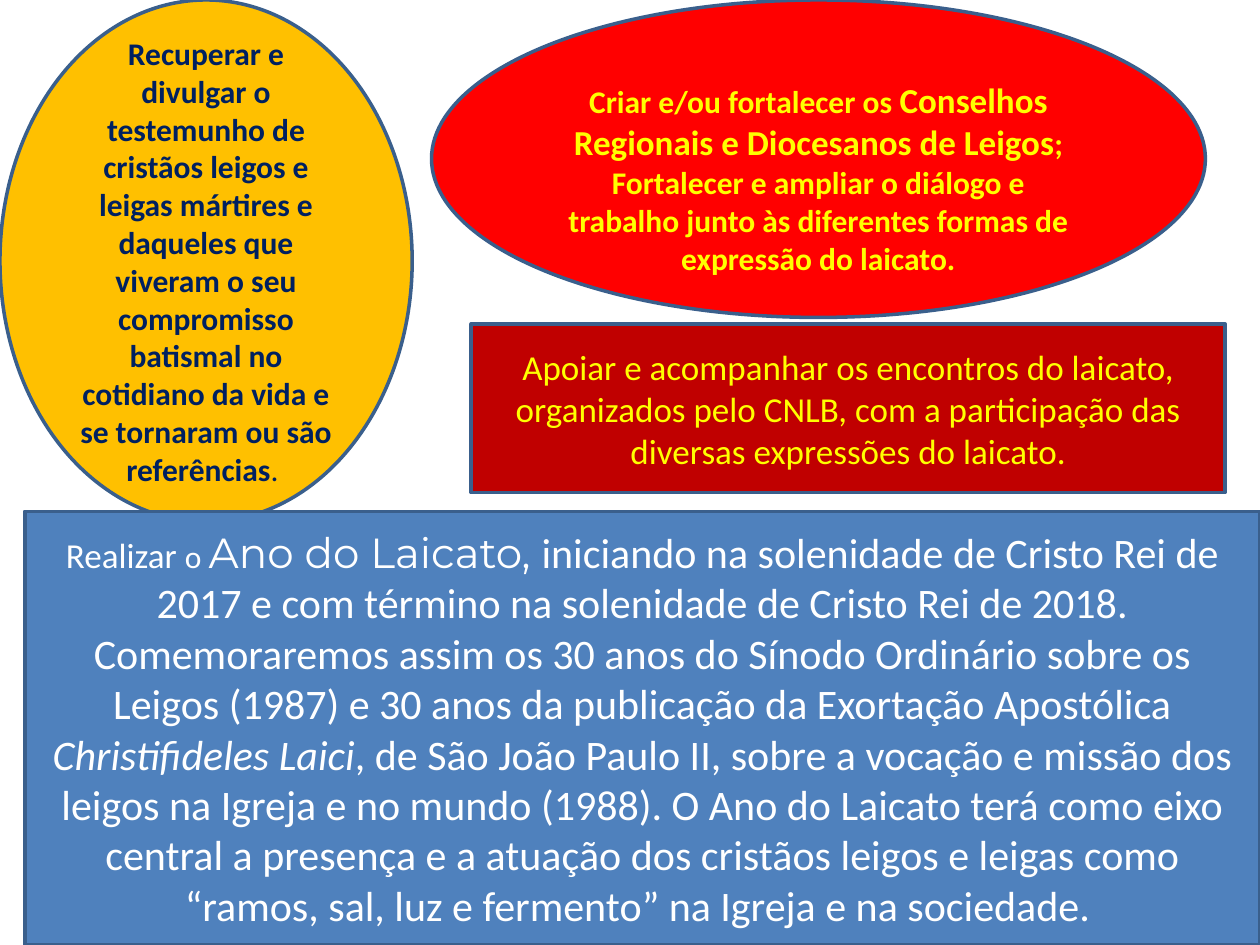
from pptx import Presentation
from pptx.dml.color import RGBColor
from pptx.enum.shapes import MSO_SHAPE as Preset
from pptx.enum.text import MSO_ANCHOR as Anchor, PP_ALIGN as Align
from pptx.util import Cm, Pt

AMBER = RGBColor(0xFF, 0xC0, 0x00)
RED = RGBColor(0xFF, 0x00, 0x00)
DARK_RED = RGBColor(0xC0, 0x00, 0x00)
BLUE = RGBColor(0x4F, 0x81, 0xBD)
OUTLINE = RGBColor(0x3A, 0x5F, 0x8C)
NAVY = RGBColor(0x00, 0x20, 0x60)
YELLOW = RGBColor(0xFF, 0xFF, 0x00)
WHITE = RGBColor(0xFF, 0xFF, 0xFF)


def add_panel(slide, preset, box, fill):
    """Add an outlined shape at box (left, top, width, height in cm)."""
    shape = slide.shapes.add_shape(preset, *(Cm(length) for length in box))
    shape.shadow.inherit = False
    shape.fill.solid()
    shape.fill.fore_color.rgb = fill
    shape.line.color.rgb = OUTLINE
    shape.line.width = Pt(2)
    frame = shape.text_frame
    frame.word_wrap = True
    frame.vertical_anchor = Anchor.MIDDLE
    return frame


def add_run(paragraph, text, size, color, bold=False, italic=False, font="Calibri"):
    paragraph.alignment = Align.CENTER
    run = paragraph.add_run()
    run.text = text
    run.font.name = font
    run.font.size = Pt(size)
    run.font.color.rgb = color
    run.font.bold = bold
    run.font.italic = italic


def add_testimony(slide, box):
    paragraph = add_panel(slide, Preset.OVAL, box, AMBER).paragraphs[0]
    add_run(paragraph, "Recuperar e divulgar o testemunho de cristãos leigos e leigas "
            "mártires e daqueles que viveram o seu compromisso batismal no cotidiano "
            "da vida e se tornaram ou são referências", 18, NAVY, bold=True)
    add_run(paragraph, ". ", 18, NAVY)


def add_councils(slide, box):
    frame = add_panel(slide, Preset.OVAL, box, RED)
    frame.margin_top = Cm(0.89)
    councils = frame.paragraphs[0]
    add_run(councils, "Criar e/ou fortalecer os ", 18, YELLOW, bold=True)
    add_run(councils, "Conselhos Regionais e Diocesanos de Leigos", 20, YELLOW, bold=True)
    add_run(councils, ";", 18, YELLOW, bold=True)
    dialogue = frame.add_paragraph()
    add_run(dialogue, "Fortalecer e ampliar o diálogo e trabalho junto às diferentes "
            "formas de expressão do laicato.", 18, YELLOW, bold=True)


def add_meetings(slide, box):
    paragraph = add_panel(slide, Preset.RECTANGLE, box, DARK_RED).paragraphs[0]
    add_run(paragraph, "Apoiar e acompanhar os encontros do laicato, organizados pelo "
            "CNLB, com a participação das diversas expressões do laicato.", 20, YELLOW)


def add_laity_year(slide, box):
    paragraph = add_panel(slide, Preset.RECTANGLE, box, BLUE).paragraphs[0]
    add_run(paragraph, "Realizar ", 20, WHITE)
    add_run(paragraph, "o ", 18, WHITE)
    add_run(paragraph, "Ano do Laicato, ", 24, WHITE, font="Montserrat")
    add_run(paragraph, "iniciando na solenidade de Cristo Rei de 2017 e com término na "
            "solenidade de Cristo Rei de 2018. Comemoraremos assim os 30 anos do Sínodo "
            "Ordinário sobre os Leigos (1987) e 30 anos da publicação da Exortação "
            "Apostólica ", 24, WHITE)
    add_run(paragraph, "Christifideles Laici", 24, WHITE, italic=True)
    add_run(paragraph, ", de São João Paulo II, sobre a vocação e missão dos leigos na "
            "Igreja e no mundo (1988). O Ano do Laicato terá como eixo central a presença "
            "e a atuação dos cristãos leigos e leigas como “ramos, sal, luz e fermento” "
            "na Igreja e na sociedade. ", 24, WHITE)


def main():
    presentation = Presentation()
    presentation.slide_width = Cm(25.4)
    presentation.slide_height = Cm(19.05)
    slide = presentation.slides.add_slide(presentation.slide_layouts[6])
    add_testimony(slide, (0, 0, 8.31, 10.52))
    add_councils(slide, (8.7, 0, 15.6, 6.4))
    add_meetings(slide, (9.5, 6.53, 15.2, 3.4))
    add_laity_year(slide, (0.5, 10.31, 24.9, 8.74))
    presentation.save("out.pptx")


if __name__ == "__main__":
    main()
